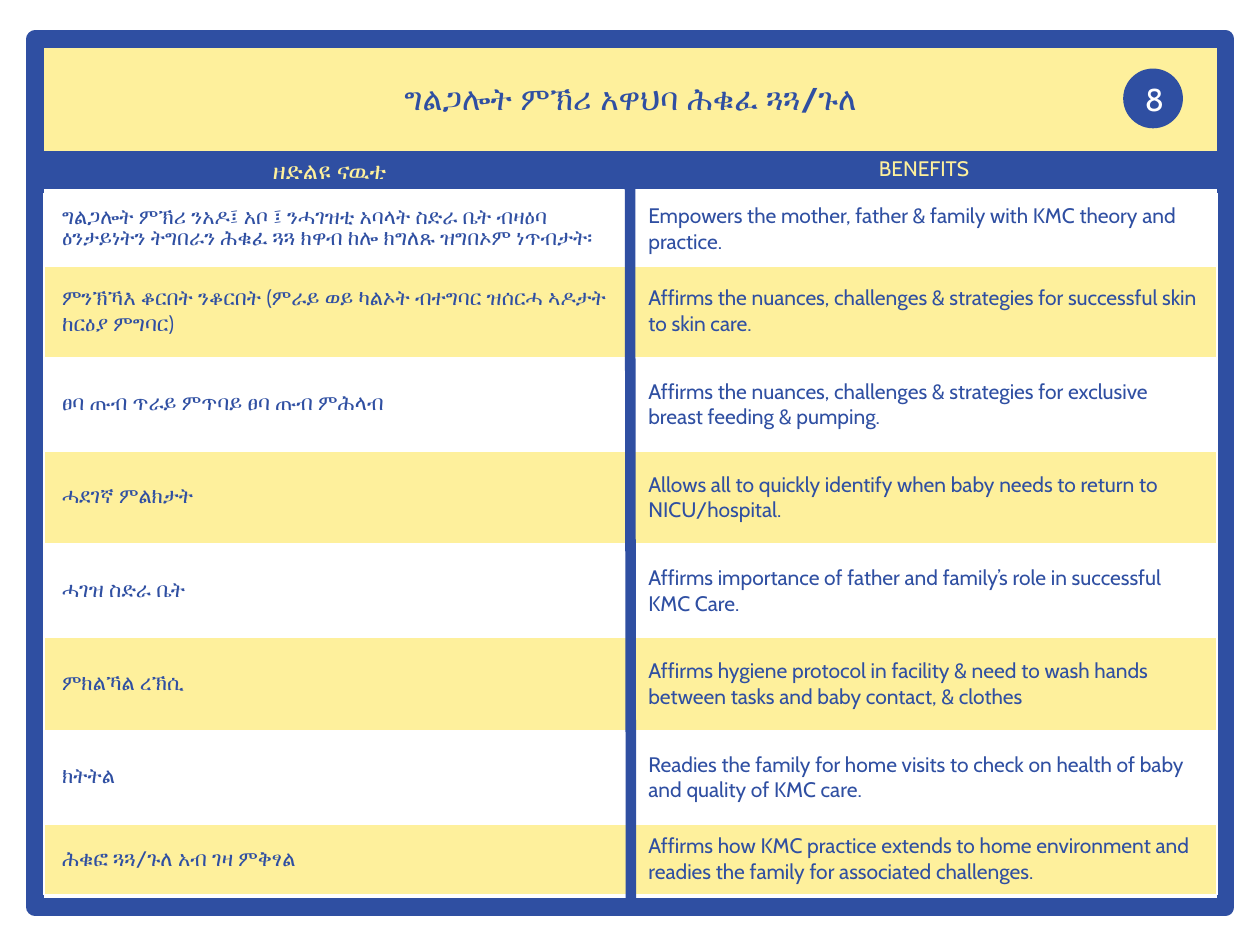
import pptx
import pptx.util
import pptx.dml.color
import pptx.enum.shapes
import pptx.enum.text
import pptx.oxml
import pptx.oxml.ns

Cm = pptx.util.Cm
Pt = pptx.util.Pt
Kind = pptx.enum.shapes.MSO_SHAPE
Align = pptx.enum.text.PP_ALIGN
MID = pptx.enum.text.MSO_ANCHOR.MIDDLE

BLUE, CREAM, WHITE = "2F4FA2", "FEF09C", "FFFFFF"
FONT = "Cabin"
TITLE = "ግልጋሎት ምኽሪ አዋህባ ሕቁፈ ጓጓ/ጉለ"
NUMBER = "8"
HEADS = [("ዘድልዩ ናዉቲ", 14, 0.71), ("BENEFITS", 12, 12.7)]
ROWS = [
    ("ግልጋሎት ምኽሪ ንአዶ፤ አቦ ፤ ንሓገዝቲ አባላት ስድራ ቤት ብዛዕባ ዕንታይነትን ትግበራን ሕቁፈ ጓጓ ክዋብ ከሎ ክግለጹ ዝግበኦም ነጥብታት፡",
     "Empowers the mother, father & family with KMC theory and practice."),
    ("ምንኽኻእ ቆርበት ንቆርበት (ምራይ ወይ ካልኦት ብተግባር ዝሰርሓ ኣዶታት ከርዕያ ምግባር)",
     "Affirms the nuances, challenges & strategies for successful skin to skin care."),
    ("ፀባ ጡብ ጥራይ ምጥባይ ፀባ ጡብ ምሕላብ",
     "Affirms the nuances, challenges & strategies for exclusive breast feeding & pumping."),
    ("ሓደገኛ ምልክታት",
     "Allows all to quickly identify when baby needs to return to NICU/hospital."),
    ("ሓገዝ ስድራ ቤት",
     "Affirms importance of father and family’s role in successful KMC Care."),
    ("ምክልኻል ረኽሲ",
     "Affirms hygiene protocol in facility & need to wash hands between tasks and baby contact, & clothes"),
    ("ክትትል",
     "Readies the family for home visits to check on health of baby and quality of KMC care."),
    ("ሕቁፎ ጓጓ/ጉለ አብ ገዛ ምቅፃል",
     "Affirms how KMC practice extends to home environment and readies the family for associated challenges."),
]
LEFT, TOP, WIDE = 0.71, 0.79, 24


def color(code):
    return pptx.dml.color.RGBColor.from_string(code)


def write(frame, text, size, code, align=Align.CENTER, bold=False):
    frame.word_wrap = True
    frame.text = text
    para = frame.paragraphs[0]
    para.alignment = align
    para.font.name = FONT
    para.font.size = Pt(size)
    para.font.bold = bold
    para.font.color.rgb = color(code)


def shape(slide, kind, box, fill=None, line=None, width=1):
    item = slide.shapes.add_shape(kind, *map(Cm, box))
    item.shadow.inherit = False
    if fill:
        item.fill.solid()
        item.fill.fore_color.rgb = color(fill)
    else:
        item.fill.background()
    if line:
        item.line.color.rgb = color(line)
        item.line.width = Pt(width)
    else:
        item.line.fill.background()
    return item


def rule(slide, *ends):
    line = slide.shapes.add_connector(
        pptx.enum.shapes.MSO_CONNECTOR.STRAIGHT, *map(Cm, ends))
    line.line.color.rgb = color(BLUE)
    line.line.width = Pt(6)
    props = line.element.find(pptx.oxml.ns.qn("p:spPr"))
    props.append(pptx.oxml.parse_xml(
        f'<a:effectLst {pptx.oxml.ns.nsdecls("a")}/>'))


def border(cell, widths):
    props = cell._tc.get_or_add_tcPr()
    for spot, (side, width) in enumerate(zip("LRTB", widths)):
        props.insert(spot, pptx.oxml.parse_xml(
            f'<a:ln{side} {pptx.oxml.ns.nsdecls("a")} w="{Pt(width)}">'
            f'<a:solidFill><a:srgbClr val="{WHITE}"/></a:solidFill></a:ln{side}>'))


def grid(slide):
    last = len(ROWS) - 1
    table = slide.shapes.add_table(
        len(ROWS), 2, Cm(0.89), Cm(3.91), Cm(23.64), Cm(14.12)).table
    table.first_row = table.horz_banding = False
    for col in table.columns:
        col.width = Cm(11.82)
    for r, texts in enumerate(ROWS):
        table.rows[r].height = Cm(1.42 if r in (0, last) else 1.88)
        for c, text in enumerate(texts):
            cell = table.cell(r, c)
            cell.vertical_anchor = MID
            cell.margin_left, cell.margin_right = Cm(0.36), Cm(0.18)
            cell.margin_top = cell.margin_bottom = Cm(0.1)
            cell.fill.solid()
            cell.fill.fore_color.rgb = color(CREAM if r % 2 else WHITE)
            border(cell, (1, 1, 3 if r == 1 else 1, 3 if r == 0 else 1))
            write(cell.text_frame, text, 12, BLUE, Align.LEFT)


def main():
    deck = pptx.Presentation()
    deck.slide_width, deck.slide_height = Cm(25.4), Cm(19.05)
    slide = deck.slides.add_slide(deck.slide_layouts[5])

    shape(slide, Kind.RECTANGLE, (LEFT, TOP, WIDE, 3), CREAM)
    shape(slide, Kind.RECTANGLE, (LEFT, TOP, WIDE, 17.5), line=BLUE, width=10)
    shape(slide, Kind.RECTANGLE, (LEFT, 3.05, WIDE, 0.76), BLUE)
    for text, size, left in HEADS:
        box = slide.shapes.add_textbox(Cm(left), Cm(3.02), Cm(11.86), Cm(0.8))
        write(box.text_frame, text, size, CREAM)

    grid(slide)
    rule(slide, 12.7, 3.71, 12.72, 18.16)

    title = slide.shapes.title
    title.left, title.top = Cm(LEFT), Cm(1.47)
    title.width, title.height = Cm(WIDE), Cm(1.02)
    write(title.text_frame, TITLE, 18, BLUE, bold=True)
    title.text_frame.vertical_anchor = MID
    title.element.getparent().append(title.element)

    rule(slide, LEFT, 3.71, 24.54, 3.71)
    badge = shape(slide, Kind.OVAL, (22.66, 1.4, 1.17, 1.17), BLUE, BLUE)
    write(badge.text_frame, NUMBER, 18, WHITE)
    badge.text_frame.vertical_anchor = MID

    deck.save("out.pptx")


if __name__ == "__main__":
    main()
